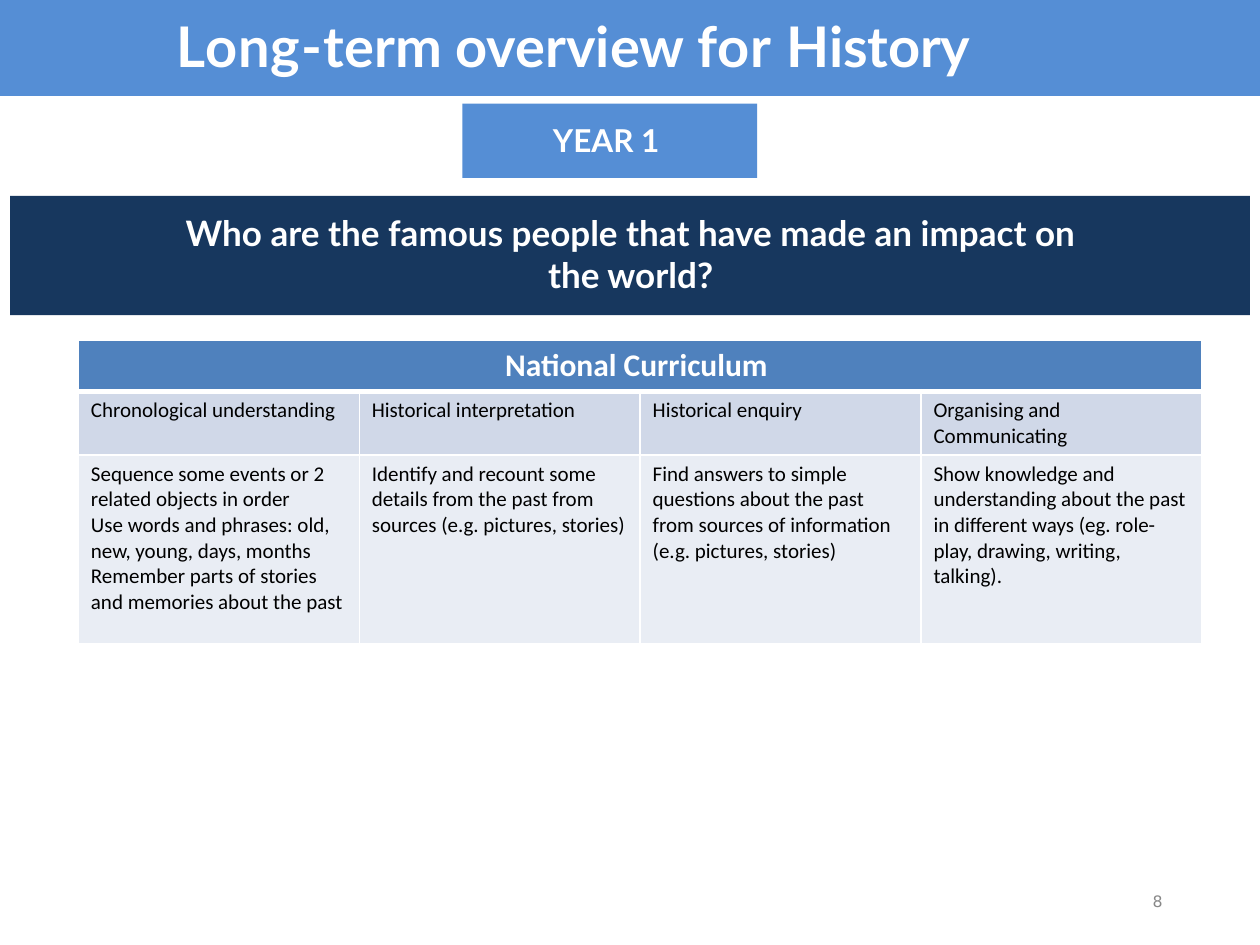
from lxml import etree
from pptx import Presentation
from pptx import util as u
from pptx.dml.color import RGBColor
from pptx.enum import shapes, text
from pptx.oxml.ns import qn

Pt = u.Pt
LEFT, CENTER = text.PP_ALIGN.LEFT, text.PP_ALIGN.CENTER
COLORS = {
    "white": "FFFFFF", "black": "000000", "grey": "888888",
    "sky": "558ED5", "navy": "17375E",
    "header": "4F81BD", "subhead": "D0D8E8", "body": "E9EDF4",
}


def color(name):
    return RGBColor.from_string(COLORS[name])


class SlideBuilder:
    """Holds the text style and the current slide."""

    heading_font = "Lato"
    table_font = "Calibri"

    def __init__(self, deck):
        self.page = deck.slides.add_slide(deck.slide_layouts[5])

    def add_spans(self, para, spans, size, font=heading_font, ink="white",
                  bold=True, align=LEFT):
        """Add (wording, letter spacing in points) pairs as runs."""
        para.alignment = align
        for wording, spacing in spans:
            span = para.add_run()
            span.text = wording
            span.font.size, span.font.name = Pt(size), font
            span.font.bold = bold
            span.font.color.rgb = color(ink)
            if spacing:
                span.font._element.set("spc", str(round(spacing * 100)))

    def fill_frame(self, frame, spans, size, left=0, top=0, **style):
        frame.word_wrap = True
        frame.auto_size = text.MSO_AUTO_SIZE.NONE
        frame.vertical_anchor = text.MSO_ANCHOR.TOP
        frame.margin_left, frame.margin_top = Pt(left), Pt(top)
        frame.margin_right = frame.margin_bottom = 0
        self.add_spans(frame.paragraphs[0], spans, size, **style)

    def band(self, area, fill):
        shape = self.page.shapes.add_shape(
            shapes.MSO_SHAPE.RECTANGLE, *map(Pt, area))
        shape.shadow.inherit = False
        shape.fill.solid()
        shape.fill.fore_color.rgb = color(fill)
        shape.line.fill.background()
        return shape

    def label(self, area, spans, size, **style):
        box = self.page.shapes.add_textbox(*map(Pt, area))
        self.fill_frame(box.text_frame, spans, size, **style)

    def title(self, area, spans, size, **style):
        title = self.page.shapes.title
        title.left, title.top, title.width, title.height = map(Pt, area)
        self.fill_frame(title.text_frame, spans, size, **style)
        # Bring the title in front of its band
        self.page.shapes._spTree.append(title._element)

    def cell(self, cell, lines, fill, size, edges, **style):
        cell.fill.solid()
        cell.fill.fore_color.rgb = color(fill)
        frame = cell.text_frame
        for number, line in enumerate(lines):
            para = frame.add_paragraph() if number else frame.paragraphs[0]
            self.add_spans(para, [(line, 0)], size, font=self.table_font,
                           **style)
        props = cell._tc.get_or_add_tcPr()
        for index, (side, width) in enumerate(edges.items()):
            edge = etree.Element(qn(f"a:ln{side}"), w=str(Pt(width)))
            solid = etree.SubElement(edge, qn("a:solidFill"))
            etree.SubElement(solid, qn("a:srgbClr"), val=COLORS["white"])
            props.insert(index, edge)

    def table(self, area, heading, rows, heights):
        columns = len(rows[0])
        grid = self.page.shapes.add_table(
            len(rows) + 1, columns, *map(Pt, area)).table
        for row, height in zip(grid.rows, heights):
            row.height = Pt(height)
        thin = dict(L=1, R=1, T=1, B=1)
        grid.cell(0, 0).merge(grid.cell(0, columns - 1))
        for column in range(columns):
            self.cell(grid.cell(0, column), [] if column else [heading],
                      "header", 18, thin | {"B": 3}, align=CENTER)
        for r, (row, fill) in enumerate(zip(rows, ("subhead", "body")), 1):
            edges = thin | {"T": 3 if r == 1 else 1}
            for column, lines in enumerate(row):
                self.cell(grid.cell(r, column), lines, fill, 12, edges,
                          ink="black", bold=False)


CURRICULUM = [
    [["Chronological understanding"], ["Historical interpretation"],
     ["Historical enquiry"], ["Organising and Communicating"]],
    [["Sequence some events or 2 related objects in order",
      "Use words and phrases: old, new, young, days, months",
      "Remember parts of stories and memories about the past"],
     ["Identify and recount some details from the past from sources "
      "(e.g. pictures, stories)"],
     ["Find answers to simple questions about the past from sources of "
      "information (e.g. pictures, stories)"],
     ["Show knowledge and understanding about the past in different ways "
      "(eg. role-play, drawing, writing, talking)."]],
]


def main():
    deck = Presentation()
    deck.slide_width, deck.slide_height = Pt(720), Pt(540)
    slide = SlideBuilder(deck)

    # Key question
    slide.band((5.76, 112, 708.5, 68.2), "navy")
    slide.label((90.7, 119.5, 539.3, 49.7),
                [("Who are the famous people that have made an impact on "
                  "the world?", 0)], 20, top=1.5, align=CENTER)

    # Title band
    slide.band((0, 0, 720, 54.8), "sky")
    slide.title((67.7, -13, 584, 59),
                [("Long-", 0.6), ("term overview ", 0), ("for ", 0.6),
                 ("History", -0.1)], 32, left=33.1, top=19.5)

    # Year group
    year = slide.band((264.2, 59.2, 168.5, 42.5), "sky")
    slide.fill_frame(year.text_frame, [("YEAR ", 0), ("1", -0.5)], 18,
                     left=51.8, top=10)

    # Page number
    slide.label((651.6, 506.9, 18, 16.6), [("8", -0.5)], 9, left=7.2, top=2.9,
                font="DejaVu Sans", ink="grey", bold=False)

    # Curriculum table
    slide.table((44.8, 194.4, 642, 172.8), "National Curriculum ",
                CURRICULUM, (28.8, 36, 108))

    deck.save("out.pptx")


if __name__ == "__main__":
    main()
